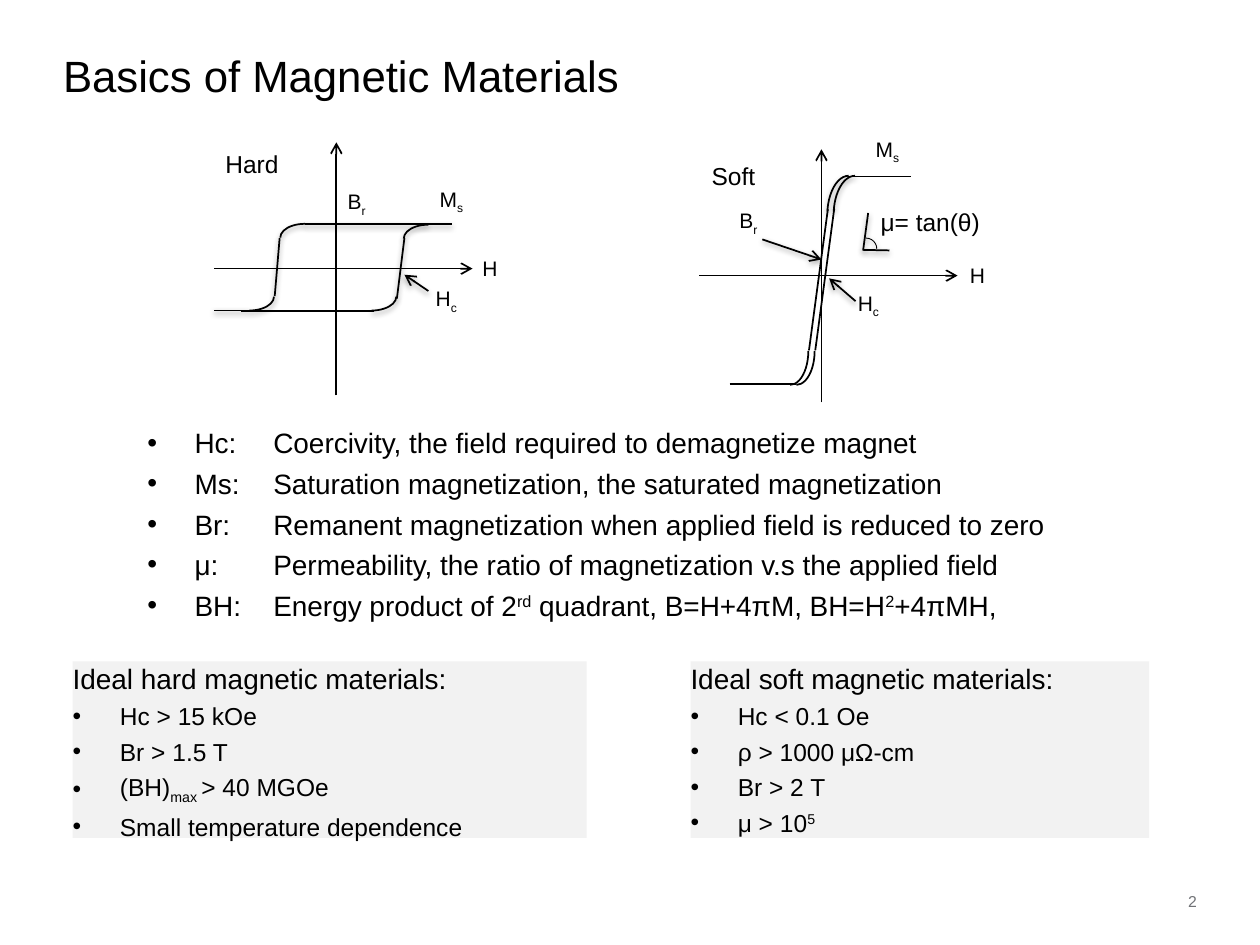
from dataclasses import dataclass
from typing import Any

import pptx
import pptx.dml.color
import pptx.enum.shapes
import pptx.enum.text
import pptx.oxml.ns
import pptx.util
from lxml import etree

Pt = pptx.util.Pt
qn = pptx.oxml.ns.qn
ShapeType = pptx.enum.shapes.MSO_SHAPE
Align = pptx.enum.text.PP_ALIGN
Anchor = pptx.enum.text.MSO_ANCHOR
BLACK = "000000"
HANGING = 27
SUB = -25
SUPER = 30


@dataclass
class Box:
    left: float
    top: float
    width: float
    height: float


@dataclass
class Stroke:
    start: tuple[float, float]
    end: tuple[float, float]
    arrow: bool = False
    shadow: bool = True


@dataclass
class Arc:
    box: Box
    rotation: float = 0
    width: float = 1
    shadow: bool = True
    start: float | None = None


@dataclass
class Span:
    text: str
    baseline: int = 0


@dataclass
class Line:
    spans: list[Span]
    size: float
    bullet: bool = False


@dataclass
class Label:
    box: Box
    text: str
    subscript: str = ""
    size: float = 12
    wrap: bool = True


def colour(value: str) -> Any:
    return pptx.dml.color.RGBColor.from_string(value)


def add_effect(shape: Any, shadow: bool) -> None:
    effects = etree.SubElement(shape.element.spPr, qn("a:effectLst"))
    if shadow:
        outer = etree.SubElement(
            effects, qn("a:outerShdw"), blurRad=str(Pt(3.1)), dist=str(Pt(1.6)),
            dir="5400000", rotWithShape="0")
        tone = etree.SubElement(outer, qn("a:srgbClr"), val=BLACK)
        etree.SubElement(tone, qn("a:alpha"), val="38000")


def set_line(shape: Any, width: float) -> None:
    shape.line.color.rgb = colour(BLACK)
    shape.line.width = Pt(width)


def draw_stroke(shapes: Any, stroke: Stroke) -> None:
    points = [Pt(value) for value in (*stroke.start, *stroke.end)]
    connector = shapes.add_connector(pptx.enum.shapes.MSO_CONNECTOR.STRAIGHT, *points)
    set_line(connector, 1)
    if stroke.arrow:
        etree.SubElement(connector.line._get_or_add_ln(), qn("a:tailEnd"), type="arrow")
    add_effect(connector, stroke.shadow)


def add_box(shapes: Any, kind: Any, box: Box) -> Any:
    return shapes.add_shape(kind, Pt(box.left), Pt(box.top), Pt(box.width), Pt(box.height))


def draw_arc(shapes: Any, arc: Arc) -> None:
    shape = add_box(shapes, ShapeType.ARC, arc.box)
    shape.rotation = arc.rotation
    if arc.start is not None:
        shape.adjustments[0] = arc.start
    shape.fill.background()
    set_line(shape, arc.width)
    add_effect(shape, arc.shadow)


def fill_text(shape: Any, lines: list[Line], inset: bool = False, wrap: bool = True,
              tone: str = BLACK, align: Any = Align.LEFT, anchor: Any = Anchor.TOP) -> None:
    frame = shape.text_frame
    frame.word_wrap = wrap
    frame.vertical_anchor = anchor
    if not inset:
        frame.margin_left = frame.margin_right = frame.margin_top = frame.margin_bottom = 0
    for index, line in enumerate(lines):
        paragraph = frame.add_paragraph() if index else frame.paragraphs[0]
        paragraph.alignment = align
        if index:
            paragraph.space_before = Pt(line.size / 4)
        if line.bullet:
            properties = paragraph._p.get_or_add_pPr()
            properties.set("marL", str(Pt(HANGING)))
            properties.set("indent", str(-Pt(HANGING)))
            etree.SubElement(properties, qn("a:buFont"), typeface="Arial")
            etree.SubElement(properties, qn("a:buChar"), char="•")
        for span in line.spans:
            run = paragraph.add_run()
            run.text = span.text
            run.font.name = "Arial"
            run.font.size = Pt(line.size)
            run.font.color.rgb = colour(tone)
            if span.baseline:
                run.font._element.set("baseline", str(span.baseline * 1000))


def add_text(page: Any, box: Box, lines: list[Line], **options: Any) -> None:
    shape = page.shapes.add_textbox(Pt(box.left), Pt(box.top), Pt(box.width), Pt(box.height))
    fill_text(shape, lines, **options)


def draw_label(page: Any, label: Label) -> None:
    spans = [Span(label.text)]
    if label.subscript:
        spans.append(Span(label.subscript, SUB))
    add_text(page, label.box, [Line(spans, label.size)], inset=True, wrap=label.wrap)


def draw_axes(page: Any, x: float, y: float) -> None:
    draw_stroke(page.shapes, Stroke((x - 69.8, y), (x + 77.8, y), True, False))
    draw_stroke(page.shapes, Stroke((x, y + 72.4), (x, y - 72.2), True, False))


def draw_soft_branch(page: Any, x: float) -> None:
    shapes = page.shapes.add_group_shape().shapes
    for start, end in (((56.2, 119.5), (45.4, 200.2)), ((0, 219.6), (34.6, 219.6)),
                       ((67.7, 100.8), (100.1, 100.8))):
        draw_stroke(shapes, Stroke((x + start[0], start[1]), (x + end[0], end[1]), shadow=False))
    draw_arc(shapes, Arc(Box(x + 15.1, 190.1, 38.9, 20.9), 90, shadow=False))
    draw_arc(shapes, Arc(Box(x + 45.4, 110.9, 45.4, 24.5), 270, start=168.65))


def draw_panel(page: Any, box: Box, heading: str, items: list[list[Span]]) -> None:
    panel = add_box(page.shapes, ShapeType.RECTANGLE, box)
    panel.fill.solid()
    panel.fill.fore_color.rgb = colour("F2F2F2")
    panel.line.fill.background()
    panel.shadow.inherit = False
    fill_text(panel, [Line([Span(heading)], 16)] + [Line(item, 14, True) for item in items])


STROKES = [
    Stroke((174.2, 128.2), (258.5, 128.2)),
    Stroke((159.8, 136.1), (157, 169.2)),
    Stroke((122.4, 177.4), (142.6, 177.4)),
    Stroke((137.5, 177.6), (213.8, 177.6), shadow=False),
    Stroke((231.1, 136.1), (226.8, 170.6)),
    Stroke((488.9, 172.1), (473.8, 159.1), True),
    Stroke((244.8, 166.3), (231.1, 157), True),
    Stroke((508.3, 143.1), (493.2, 142.8)),
    Stroke((496.1, 121.7), (493.2, 143.1)),
    Stroke((435.6, 136.8), (469.4, 148.3), True),
]
ARCS = [
    Arc(Box(166.3, 121.7, 15.8, 28.1), 270),
    Arc(Box(134.6, 155.5, 15.8, 28.1), 90),
    Arc(Box(236.9, 122.2, 15.8, 28.1), 270),
    Arc(Box(204.5, 155.5, 15.8, 28.1), 90),
    Arc(Box(488.9, 136.1, 12.2, 12.2), width=0.5),
]
LABELS = [
    Label(Box(121.7, 81.4, 69.8, 24.2), "Hard", size=14),
    Label(Box(399.6, 88.6, 64.8, 24.2), "Soft", size=14),
    Label(Box(268.6, 142.6, 18.7, 36), "H"),
    Label(Box(547.2, 146.2, 18.7, 36), "H"),
    Label(Box(191.5, 104.4, 39.6, 21.8), "B", "r"),
    Label(Box(415.4, 115.2, 39.6, 21.8), "B", "r"),
    Label(Box(241.9, 159.8, 30.2, 21.8), "H", "c"),
    Label(Box(483.1, 162.3, 46.1, 21.8), "H", "c"),
    Label(Box(244.1, 103, 51.8, 21.8), "M", "s"),
    Label(Box(493.2, 74.2, 51.8, 21.8), "M", "s"),
    Label(Box(496.1, 114.5, 72, 24.2), "μ= tan(θ)", size=14, wrap=False),
]
DEFINITIONS = [
    [Span("Hc: \tCoercivity, the field required to demagnetize magnet")],
    [Span("Ms: \tSaturation magnetization, the saturated magnetization")],
    [Span("Br: \tRemanent magnetization when applied field is reduced to zero")],
    [Span("μ: \tPermeability, the ratio of magnetization v.s the applied field")],
    [Span("BH:\tEnergy product of 2"), Span("rd", SUPER),
     Span(" quadrant, B=H+4πM, BH=H"), Span("2", SUPER), Span("+4πMH,")],
]
HARD_GOALS = [
    [Span("Hc > 15 kOe")], [Span("Br > 1.5 T")],
    [Span("(BH)"), Span("max ", SUB), Span("> 40 MGOe")],
    [Span("Small temperature dependence")],
]
SOFT_GOALS = [
    [Span("Hc < 0.1 Oe")], [Span("ρ > 1000 μΩ-cm")], [Span("Br > 2 T")],
    [Span("μ > 10"), Span("5", SUPER)],
]


def main() -> None:
    deck = pptx.Presentation()
    deck.slide_width, deck.slide_height = Pt(720), Pt(540)
    page = deck.slides.add_slide(deck.slide_layouts[6])
    add_text(page, Box(36, 28, 522, 30), [Line([Span("Basics of Magnetic Materials")], 25)])
    add_text(page, Box(84.2, 243.4, 599, 112.3), [Line(item, 16, True) for item in DEFINITIONS])
    draw_axes(page, 192.2, 153.5)
    draw_axes(page, 469.4, 157.5)
    for stroke in STROKES:
        draw_stroke(page.shapes, stroke)
    for arc in ARCS:
        draw_arc(page.shapes, arc)
    for x in (416.9, 420.5):
        draw_soft_branch(page, x)
    for label in LABELS:
        draw_label(page, label)
    draw_panel(page, Box(41.5, 378, 293.8, 100.8), "Ideal hard magnetic materials:", HARD_GOALS)
    draw_panel(page, Box(394.6, 378, 262.1, 100.8), "Ideal soft magnetic materials:", SOFT_GOALS)
    add_text(page, Box(516.2, 500.4, 167.8, 28.8), [Line([Span("2")], 9)],
             tone="707276", align=Align.RIGHT, anchor=Anchor.MIDDLE)
    deck.save("out.pptx")


if __name__ == "__main__":
    main()
